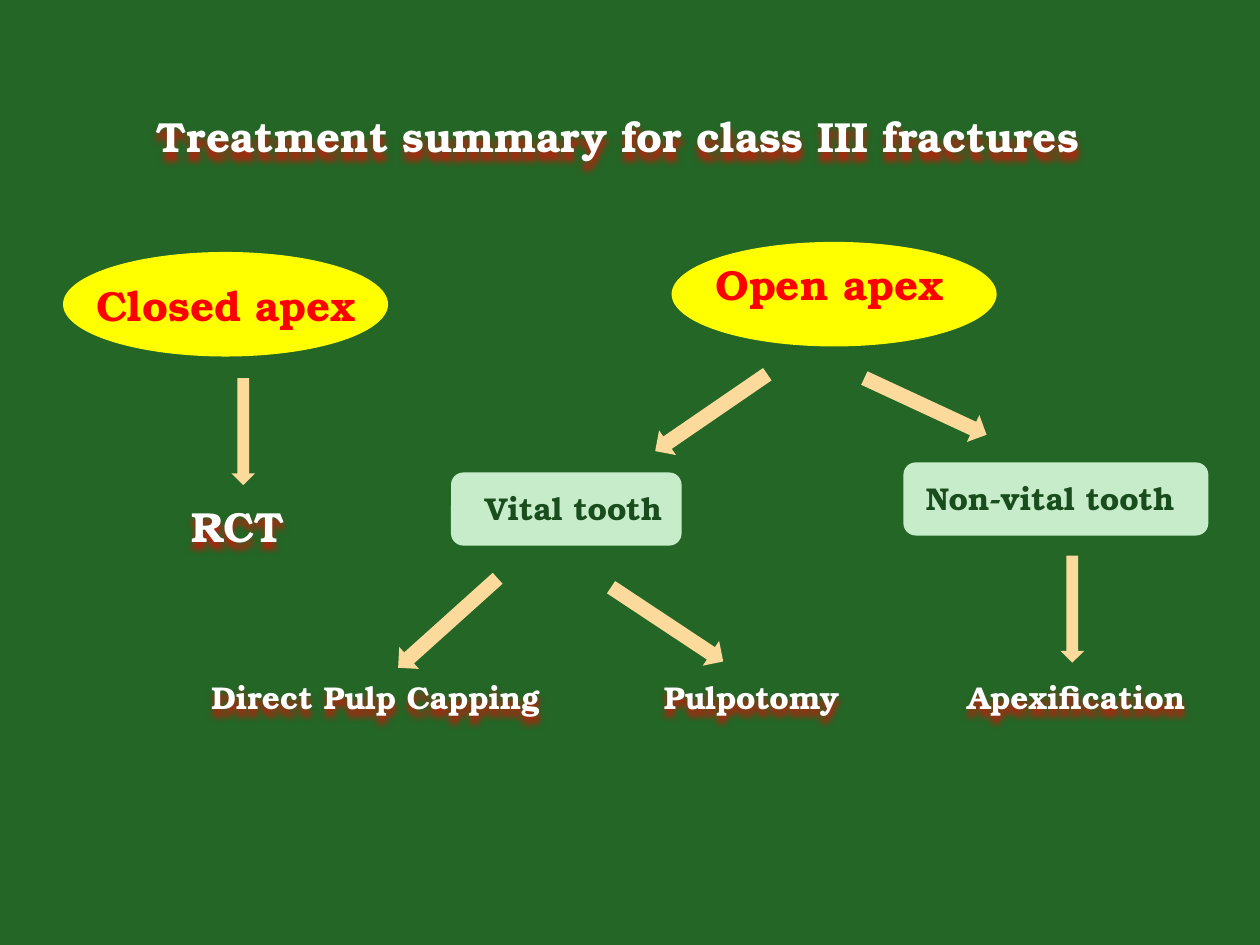
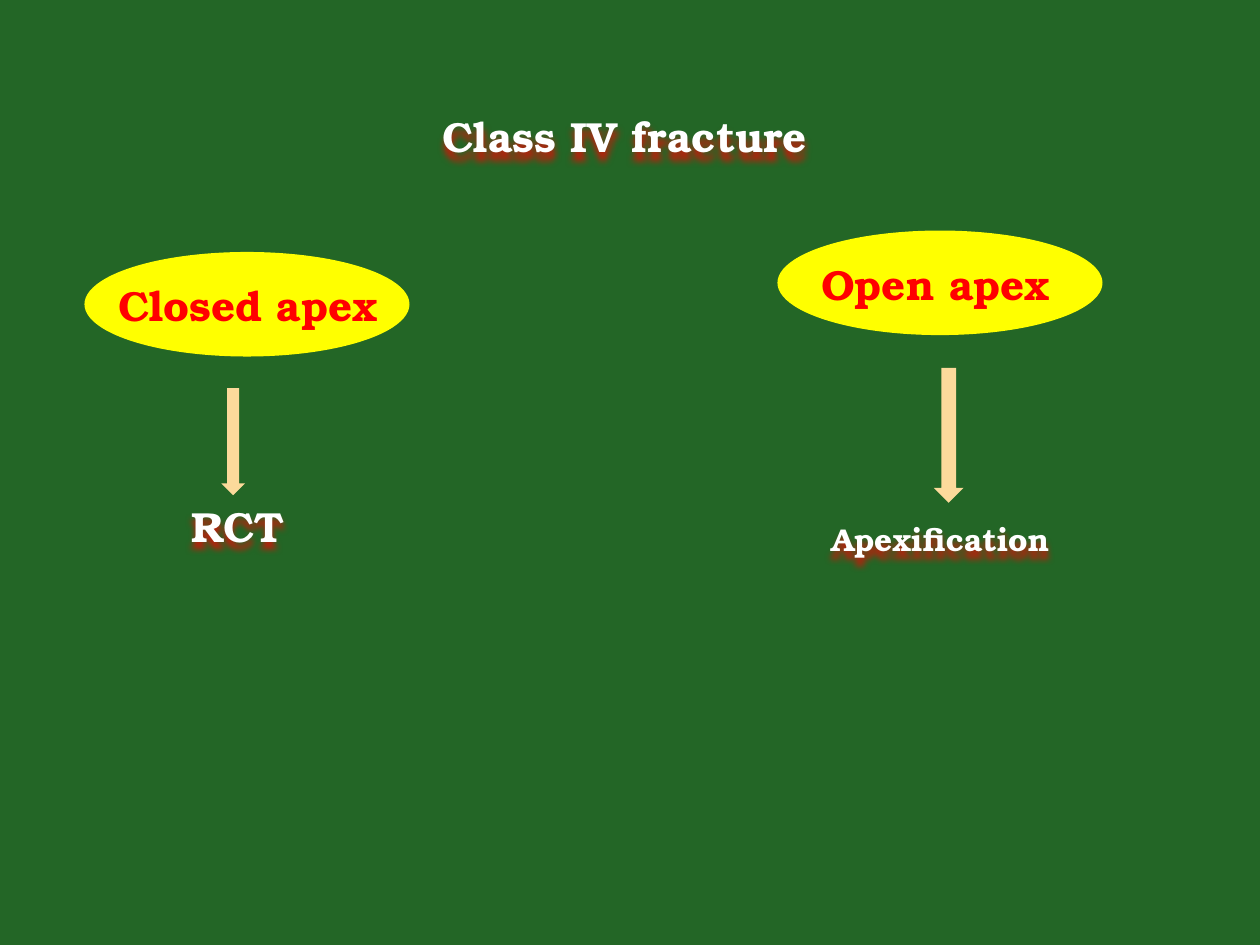
import math

from lxml import etree
from pptx import Presentation
from pptx import util as u
from pptx.dml.color import RGBColor
from pptx.enum import shapes, text
from pptx.oxml.ns import qn

GREEN = RGBColor(0x23, 0x66, 0x26)
DARK_GREEN = RGBColor(0x1A, 0x4D, 0x1D)
MINT = RGBColor(0xC7, 0xEC, 0xC9)
YELLOW = RGBColor(0xFF, 0xFF, 0x00)
RED = RGBColor(0xFF, 0x00, 0x00)
WHITE = RGBColor(0xFF, 0xFF, 0xFF)
PEACH = RGBColor(0xFC, 0xDA, 0x9B)
FONT = "TeX Gyre Bonum"

TITLE_BOX = (0.92, 0.83, 8.08, 0.5)
OVAL_SIZE = (2.58, 0.83)
ARROW_RATIO = 0.22  # arrow thickness per length


def add_red_shadow(sp):
    """Drop a soft red shadow straight down behind the text."""
    effects = etree.SubElement(sp._element.spPr, qn("a:effectLst"))
    shadow = etree.SubElement(effects, qn("a:outerShdw"), blurRad="50800",
                              dist="50800", dir="5400000", algn="t", rotWithShape="0")
    color = etree.SubElement(shadow, qn("a:srgbClr"), val=str(RED))
    etree.SubElement(color, qn("a:alpha"), val="75000")


def add_text(slide, words, box, size=18, color=WHITE, align=text.PP_ALIGN.LEFT,
             wrap=False, shadow=True):
    sp = slide.shapes.add_textbox(*map(u.Inches, box))
    tf = sp.text_frame
    tf.word_wrap = wrap
    p = tf.paragraphs[0]
    p.alignment = align
    r = p.add_run()
    r.text = words
    r.font.name = FONT
    r.font.size = u.Pt(size)
    r.font.bold = True
    r.font.color.rgb = color
    if shadow:
        add_red_shadow(sp)


def add_block(slide, kind, box, fill):
    sp = slide.shapes.add_shape(kind, *map(u.Inches, box))
    sp.shadow.inherit = False
    sp.fill.solid()
    sp.fill.fore_color.rgb = fill
    sp.line.fill.background()
    return sp


def add_arrow(slide, tail, tip):
    """Block arrow from tail to tip, turned about its middle."""
    dx, dy = tip[0] - tail[0], tip[1] - tail[1]
    length = math.hypot(dx, dy)
    thick = length * ARROW_RATIO
    box = ((tail[0] + tip[0] - length) / 2, (tail[1] + tip[1] - thick) / 2, length, thick)
    sp = add_block(slide, shapes.MSO_SHAPE.LEFT_ARROW, box, PEACH)
    sp.rotation = math.degrees(math.atan2(dy, dx)) + 180


def add_apex(slide, words, left, top, inset, label_width):
    """Yellow oval with its red label set in from the top left."""
    add_block(slide, shapes.MSO_SHAPE.OVAL, (left, top, *OVAL_SIZE), YELLOW)
    add_text(slide, words, (left + inset[0], top + inset[1], label_width, 0.58),
             size=24, color=RED, wrap=True, shadow=False)


def add_tooth(slide, words, box, inset, label_width):
    """Rounded mint box with a dark label."""
    add_block(slide, shapes.MSO_SHAPE.ROUNDED_RECTANGLE, box, MINT)
    add_text(slide, words, (box[0] + inset, box[1] + 0.08, label_width, 0.4),
             color=DARK_GREEN, shadow=False)


def add_closed_branch(slide, left, arrow_x, arrow_top):
    """Closed apex leads to RCT."""
    add_apex(slide, "Closed apex", left, 2, (0.17, 0.17), 2.67)
    add_arrow(slide, (arrow_x, arrow_top), (arrow_x, arrow_top + 0.85))
    add_text(slide, "RCT", (1.42, 3.92, 1, 0.58), size=24, wrap=True)


def add_titled_slide(prs, title):
    slide = prs.slides.add_slide(prs.slide_layouts[6])
    slide.background.fill.solid()
    slide.background.fill.fore_color.rgb = GREEN
    add_text(slide, title, TITLE_BOX, size=24, align=text.PP_ALIGN.CENTER, wrap=True)
    return slide


def build_class_iii(prs):
    slide = add_titled_slide(prs, "Treatment summary for class III fractures ")
    add_closed_branch(slide, 0.5, 1.93, 3)

    # Open apex splits by tooth vitality
    add_apex(slide, "Open apex", 5.33, 1.92, (0.25, 0.08), 2.21)
    add_tooth(slide, "Vital tooth", (3.58, 3.75, 1.83, 0.58), 0.17, 1.63)
    add_tooth(slide, "Non-vital tooth", (7.17, 3.67, 2.42, 0.58), 0.08, 2.2)

    # Treatments share one row
    for words, left, width in (("Direct Pulp Capping", 1.58, 2.84),
                               ("Pulpotomy", 5.17, 1.62),
                               ("Apexification", 7.58, 1.95)):
        add_text(slide, words, (left, 5.33, width, 0.4))

    for tail, tip in (((6.09, 2.97), (5.2, 3.58)),    # open apex to vital
                      ((6.86, 3), (7.83, 3.45)),      # open apex to non-vital
                      ((3.95, 4.59), (3.16, 5.3)),    # vital to capping
                      ((4.85, 4.66), (5.74, 5.25)),   # vital to pulpotomy
                      ((8.51, 4.41), (8.51, 5.26))):  # non-vital to apexification
        add_arrow(slide, tail, tip)


def build_class_iv(prs):
    slide = add_titled_slide(prs, "Class IV fracture")
    add_closed_branch(slide, 0.67, 1.85, 3.08)

    # Open apex leads to apexification
    add_apex(slide, "Open apex", 6.17, 1.83, (0.25, 0.17), 2.21)
    add_arrow(slide, (7.53, 2.92), (7.53, 3.99))
    add_text(slide, "Apexification", (6.5, 4.08, 1.95, 0.4))


def main():
    prs = Presentation()
    prs.slide_width, prs.slide_height = u.Inches(10), u.Inches(7.5)
    build_class_iii(prs)
    build_class_iv(prs)
    prs.save("out.pptx")


if __name__ == "__main__":
    main()
